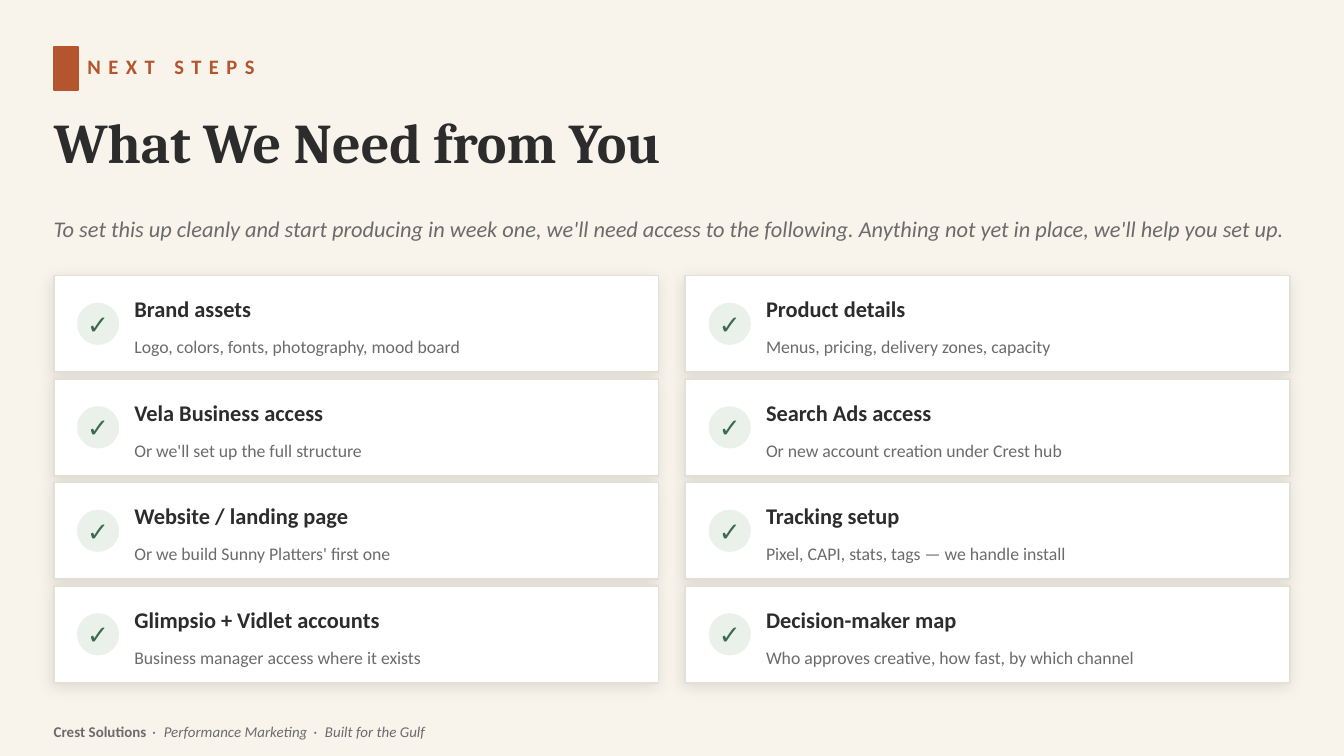
from dataclasses import dataclass
from lxml.etree import SubElement
from pptx import Presentation
from pptx.dml.color import RGBColor
from pptx.enum.shapes import MSO_SHAPE
from pptx.enum.text import MSO_ANCHOR, MSO_AUTO_SIZE, PP_ALIGN
from pptx.oxml.ns import qn
from pptx.util import Pt

KICKER = "NEXT STEPS"
TITLE = "What We Need from You"
INTRO = ("To set this up cleanly and start producing in week one, we'll need access "
         "to the following. Anything not yet in place, we'll help you set up.")
NEEDS = [
    ("Brand assets", "Logo, colors, fonts, photography, mood board"),
    ("Product details", "Menus, pricing, delivery zones, capacity"),
    ("Vela Business access", "Or we'll set up the full structure"),
    ("Search Ads access", "Or new account creation under Crest hub"),
    ("Website / landing page", "Or we build Sunny Platters' first one"),
    ("Tracking setup", "Pixel, CAPI, stats, tags — we handle install"),
    ("Glimpsio + Vidlet accounts", "Business manager access where it exists"),
    ("Decision-maker map", "Who approves creative, how fast, by which channel"),
]
COMPANY = "Crest Solutions"
TAGLINES = ["Performance Marketing", "Built for the Gulf"]


@dataclass(frozen=True)
class Theme:
    head: str = "Cambria"
    body: str = "Calibri"
    paper: str = "F8F4EC"
    accent: str = "B5552E"
    ink: str = "2C2C2C"
    muted: str = "6B6B6B"
    card: str = "FFFFFF"
    border: str = "E5E0D5"
    badge: str = "EAF0EA"
    check: str = "3A6B4E"
    shadow: str = "000000"
    title_size: float = 30
    check_size: float = 14
    lead_size: float = 12
    kicker_size: float = 11
    detail_size: float = 9.5
    footer_size: float = 8


T = Theme()
MARGIN, WIDTH = 28.8, 662.4
COLS, GRID_TOP = 2, 147.6
CARD_W, CARD_H = 324, 51.84
STEP_X, STEP_Y = 338.4, 55.44


def place(sp, left, top, width, height):
    sp.left, sp.top, sp.width, sp.height = Pt(left), Pt(top), Pt(width), Pt(height)


def add_run(p, text, size, color, font=T.body, bold=False, italic=False, spacing=0):
    r = p.add_run()
    r.text = text
    r.font.size, r.font.name = Pt(size), font
    r.font.bold, r.font.italic = bold, italic
    r.font.color.rgb = RGBColor.from_string(color)
    if spacing:
        r._r.get_or_add_rPr().set("spc", str(round(spacing * 100)))


def format_frame(sp, align=PP_ALIGN.LEFT):
    tf = sp.text_frame
    tf.margin_left = tf.margin_top = tf.margin_right = tf.margin_bottom = 0
    tf.auto_size = MSO_AUTO_SIZE.NONE
    tf.word_wrap = True
    tf.vertical_anchor = MSO_ANCHOR.MIDDLE
    p = tf.paragraphs[0]
    p.alignment = align
    return p


def add_text(s, left, top, width, height, align=PP_ALIGN.LEFT):
    sp = s.shapes.add_textbox(Pt(left), Pt(top), Pt(width), Pt(height))
    return format_frame(sp, align)


def add_box(s, kind, left, top, width, height, fill, line):
    sp = s.shapes.add_shape(kind, Pt(left), Pt(top), Pt(width), Pt(height))
    sp.shadow.inherit = False
    sp.fill.solid()
    sp.fill.fore_color.rgb = RGBColor.from_string(fill)
    sp.line.color.rgb = RGBColor.from_string(line)
    sp.line.width = Pt(1)
    return sp


def add_shadow(sp):
    effects = sp._element.spPr.find(qn("a:effectLst"))
    shadow = SubElement(effects, qn("a:outerShdw"), blurRad=str(Pt(8)), dist=str(Pt(2)),
                        dir=str(135 * 60000), algn="bl", rotWithShape="0")
    color = SubElement(shadow, qn("a:srgbClr"), val=T.shadow)
    SubElement(color, qn("a:alpha"), val="10000")


def add_need(s, x, y, name, detail):
    add_shadow(add_box(s, MSO_SHAPE.RECTANGLE, x, y, CARD_W, CARD_H, T.card, T.border))
    add_box(s, MSO_SHAPE.OVAL, x + 12.96, y + 15.12, 21.6, 21.6, T.badge, T.badge)
    p = add_text(s, x + 12.96, y + 12.96, 21.6, 25.92, PP_ALIGN.CENTER)
    add_run(p, "✓", T.check_size, T.check, bold=True)
    p = add_text(s, x + 43.2, y + 7.2, 266.4, 21.6)
    add_run(p, name, T.lead_size, T.ink, bold=True)
    p = add_text(s, x + 43.2, y + 27.36, 266.4, 21.6)
    add_run(p, detail, T.detail_size, T.muted)


def main():
    prs = Presentation()
    prs.slide_width, prs.slide_height = Pt(720), Pt(405)
    s = prs.slides.add_slide(prs.slide_layouts[5])
    s.background.fill.solid()
    s.background.fill.fore_color.rgb = RGBColor.from_string(T.paper)

    add_box(s, MSO_SHAPE.RECTANGLE, MARGIN, 25.2, 12.96, 23.04, T.accent, T.accent)
    p = add_text(s, 46.8, 23.04, 288, 25.2)
    add_run(p, KICKER, T.kicker_size, T.accent, bold=True, spacing=4)

    title = s.shapes.title
    place(title, MARGIN, 50.4, WIDTH, 50.4)
    add_run(format_frame(title), TITLE, T.title_size, T.ink, font=T.head, bold=True)

    p = add_text(s, MARGIN, 108, WIDTH, 28.8)
    add_run(p, INTRO, T.lead_size, T.muted, italic=True)

    for i, (name, detail) in enumerate(NEEDS):
        row, col = divmod(i, COLS)
        add_need(s, MARGIN + col * STEP_X, GRID_TOP + row * STEP_Y, name, detail)

    p = add_text(s, MARGIN, 383.04, WIDTH, 18)
    add_run(p, COMPANY, T.footer_size, T.muted, bold=True)
    for tagline in TAGLINES:
        add_run(p, " · ", T.footer_size, T.muted, italic=True, spacing=1.2)
        add_run(p, tagline, T.footer_size, T.muted, italic=True)

    prs.save("out.pptx")


if __name__ == "__main__":
    main()
